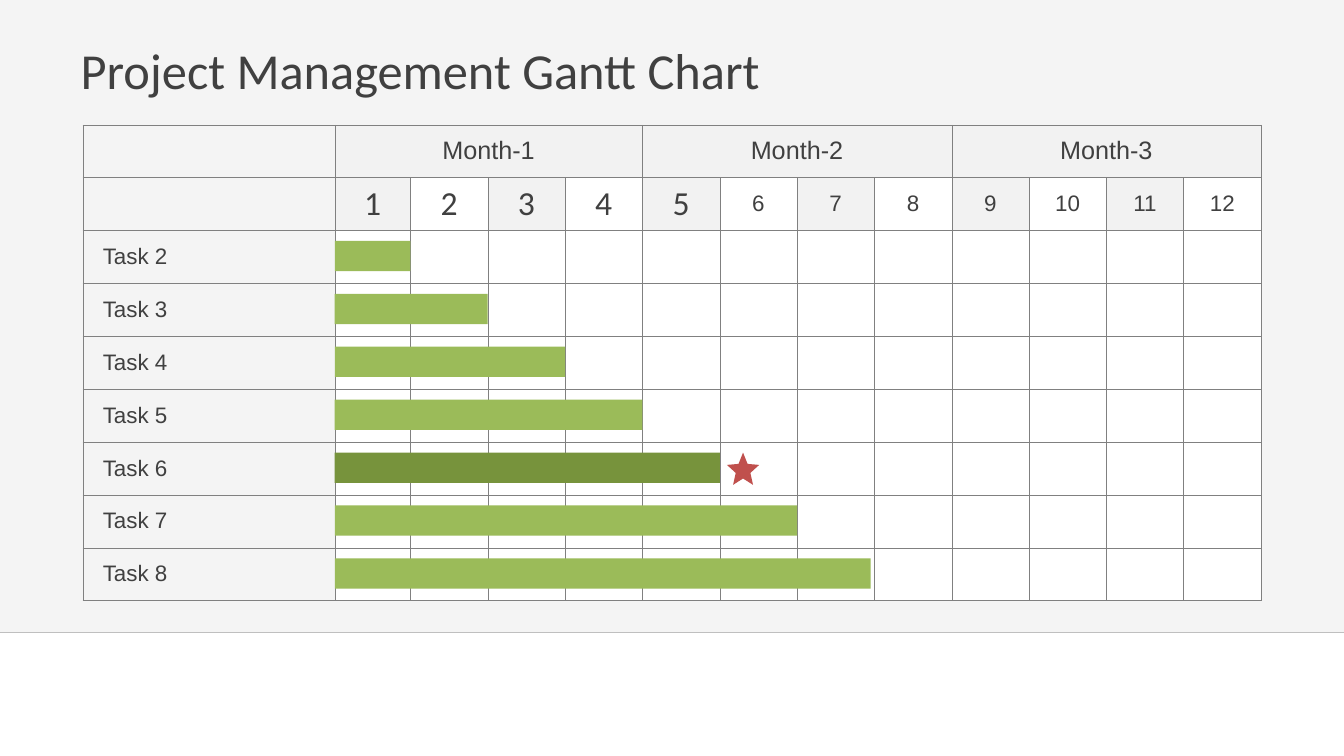
from lxml import etree
from pptx import Presentation
from pptx.dml.color import RGBColor
from pptx.enum import shapes, text
from pptx.oxml import ns
from pptx.util import Inches, Pt

COLORS = {
    "band": "D9D9D9",
    "text": "404040",
    "grid": "808080",
    "rule": "BFBFBF",
    "shade": "F2F2F2",
    "white": "FFFFFF",
    "bar": "9BBB59",
    "milestone_bar": "77933C",
    "star": "C0504D",
}
LEFT, TOP, WIDTH, HEIGHT = 0.82, 1.24, 11.69, 4.72
LABEL_WIDTH, FIRST_WEEK, HEADER_HEIGHT = 2.5, 0.75, 0.52
WEEKS, MONTHS = 12, 3
WEEKS_PER_MONTH = WEEKS // MONTHS
TASKS = [f"Task {number}" for number in range(2, 9)]
WEEK_WIDTH = (WIDTH - LABEL_WIDTH - FIRST_WEEK) / (WEEKS - 1)
ROW_HEIGHT = (HEIGHT - HEADER_HEIGHT) / (len(TASKS) + 1)
BAR_TOP, BAR_HEIGHT = 2.39, 0.3
MILESTONE_TASK = "Task 6"
BAND_HEIGHT = 6.27


def set_fill(fill, color, opacity=100):
    fill.solid()
    fill.fore_color.rgb = RGBColor.from_string(COLORS[color])
    if opacity < 100:
        color_element = fill._xPr.find(".//" + ns.qn("a:srgbClr"))
        etree.SubElement(color_element, ns.qn("a:alpha"), val=str(opacity * 1000))


def format_text(text_frame, size, font_name):
    for paragraph in text_frame.paragraphs:
        for run in paragraph.runs:
            run.font.size = Pt(size)
            run.font.name = font_name
            run.font.bold = False
            run.font.color.rgb = RGBColor.from_string(COLORS["text"])


def add_shape(slide, kind, left, top, width, height, color, opacity=100):
    shape = slide.shapes.add_shape(
        kind, Inches(left), Inches(top), Inches(width), Inches(height)
    )
    shape.shadow.inherit = False
    set_fill(shape.fill, color, opacity)
    shape.line.fill.background()
    return shape


def add_title(slide, wording):
    title = slide.shapes.add_textbox(
        Inches(0.67), Inches(0.3), Inches(12), Inches(0.78)
    )
    text_frame = title.text_frame
    text_frame.word_wrap = True
    text_frame.vertical_anchor = text.MSO_ANCHOR.MIDDLE
    text_frame.margin_left = text_frame.margin_right = Inches(0.13)
    text_frame.margin_top = text_frame.margin_bottom = Inches(0.07)
    text_frame.text = wording
    format_text(text_frame, 36, "Calibri")


def add_rule(slide):
    rule = slide.shapes.add_connector(
        shapes.MSO_CONNECTOR.STRAIGHT,
        Inches(0), Inches(BAND_HEIGHT), Inches(13.33), Inches(BAND_HEIGHT),
    )
    rule.line.color.rgb = RGBColor.from_string(COLORS["rule"])
    rule.line.width = Pt(0.25)
    etree.SubElement(rule._element.spPr, ns.qn("a:effectLst"))


def set_borders(cell):
    properties = cell._tc.get_or_add_tcPr()
    for side in ("lnL", "lnR", "lnT", "lnB"):
        line = etree.SubElement(properties, ns.qn(f"a:{side}"), w=str(Pt(0.25)))
        fill = etree.SubElement(line, ns.qn("a:solidFill"))
        etree.SubElement(fill, ns.qn("a:srgbClr"), val=COLORS["grid"])


def write_cell(cell, wording, size, font_name, margins, centered=True):
    cell.vertical_anchor = text.MSO_ANCHOR.MIDDLE
    cell.margin_left, cell.margin_right = (Inches(margin) for margin in margins)
    cell.text_frame.text = wording
    if centered:
        cell.text_frame.paragraphs[0].alignment = text.PP_ALIGN.CENTER
    format_text(cell.text_frame, size, font_name)


def add_schedule(slide):
    table = slide.shapes.add_table(
        len(TASKS) + 2, WEEKS + 1,
        Inches(LEFT), Inches(TOP), Inches(WIDTH), Inches(HEIGHT),
    ).table
    table.first_row = table.horz_banding = False
    widths = [LABEL_WIDTH, FIRST_WEEK] + [WEEK_WIDTH] * (WEEKS - 1)
    for column, width in zip(table.columns, widths):
        column.width = Inches(width)
    heights = [HEADER_HEIGHT] + [ROW_HEIGHT] * (len(TASKS) + 1)
    for row, height in zip(table.rows, heights):
        row.height = Inches(height)

    for row_index, row in enumerate(table.rows):
        for column_index, cell in enumerate(row.cells):
            set_borders(cell)
            if column_index == 0:
                cell.fill.background()
            elif row_index == 0 or (row_index == 1 and column_index % 2):
                set_fill(cell.fill, "shade")
            else:
                set_fill(cell.fill, "white", 15 if row_index == 1 else 11)

    for month in range(MONTHS):
        first = 1 + month * WEEKS_PER_MONTH
        cell = table.cell(0, first)
        cell.merge(table.cell(0, first + WEEKS_PER_MONTH - 1))
        write_cell(cell, f"Month-{month + 1}", 18, "Arial", (0, 0))
    for week in range(1, WEEKS + 1):
        size, font_name = (24, "Calibri") if week <= 5 else (16, "Arial")
        write_cell(table.cell(1, week), str(week), size, font_name, (0.1, 0.1))
    for row_index, task in enumerate(TASKS, 2):
        write_cell(table.cell(row_index, 0), task, 16, "Arial", (0.2, 0.1), False)


def add_bars(slide):
    start = LEFT + LABEL_WIDTH
    for index, task in enumerate(TASKS):
        top = BAR_TOP + index * ROW_HEIGHT
        width = FIRST_WEEK + index * WEEK_WIDTH
        if index == len(TASKS) - 1:
            width -= 0.04
        color = "milestone_bar" if task == MILESTONE_TASK else "bar"
        bar = add_shape(
            slide, shapes.MSO_SHAPE.ROUNDED_RECTANGLE,
            start, top, width, BAR_HEIGHT, color,
        )
        bar.adjustments[0] = 0


def add_milestone(slide):
    top = BAR_TOP + TASKS.index(MILESTONE_TASK) * ROW_HEIGHT
    star = add_shape(
        slide, shapes.MSO_SHAPE.STAR_5_POINT, 7.21, top, 0.32, 0.32, "star"
    )
    star.adjustments[0] = 0.227


def main():
    presentation = Presentation()
    presentation.slide_width = Inches(13.33)
    presentation.slide_height = Inches(7.5)
    slide = presentation.slides.add_slide(presentation.slide_layouts[6])
    add_shape(
        slide, shapes.MSO_SHAPE.RECTANGLE, 0, 0, 13.33, BAND_HEIGHT, "band", 28
    )
    add_title(slide, "Project Management Gantt Chart")
    add_schedule(slide)
    add_rule(slide)
    add_bars(slide)
    add_milestone(slide)
    presentation.save("out.pptx")


if __name__ == "__main__":
    main()
